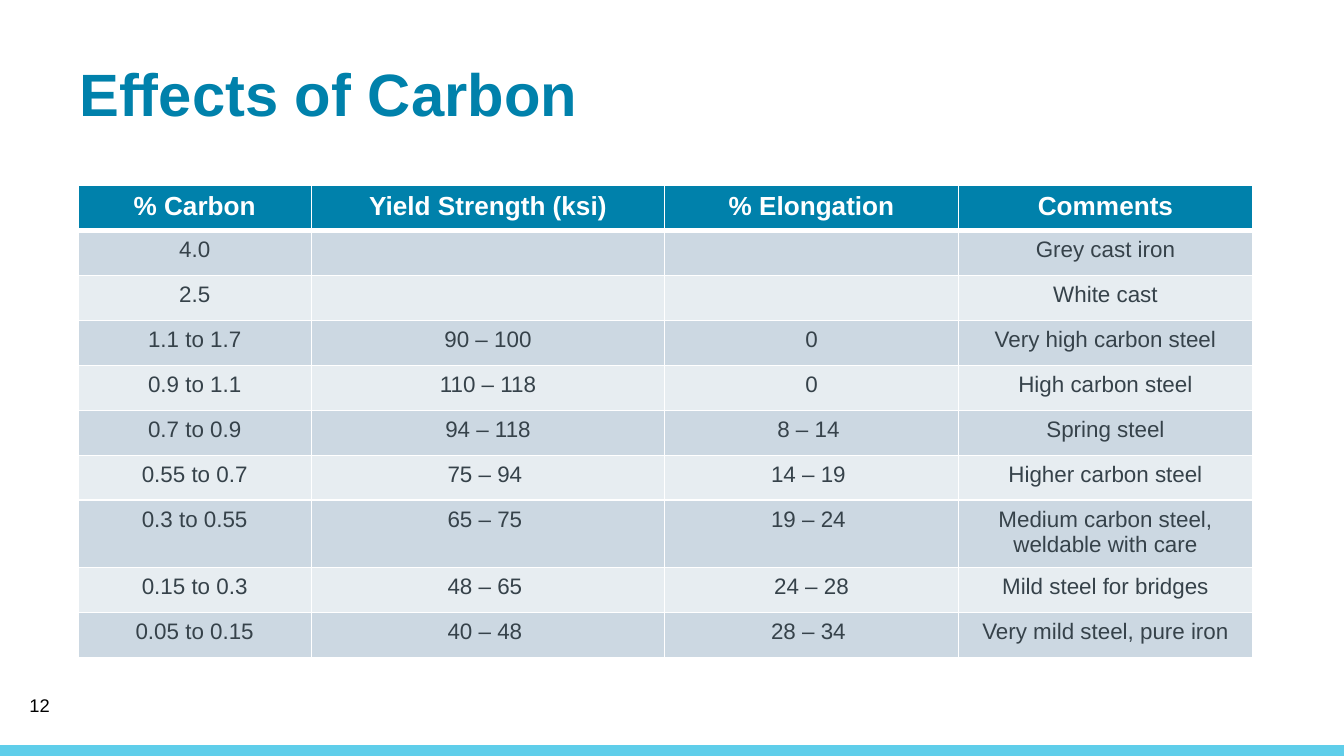
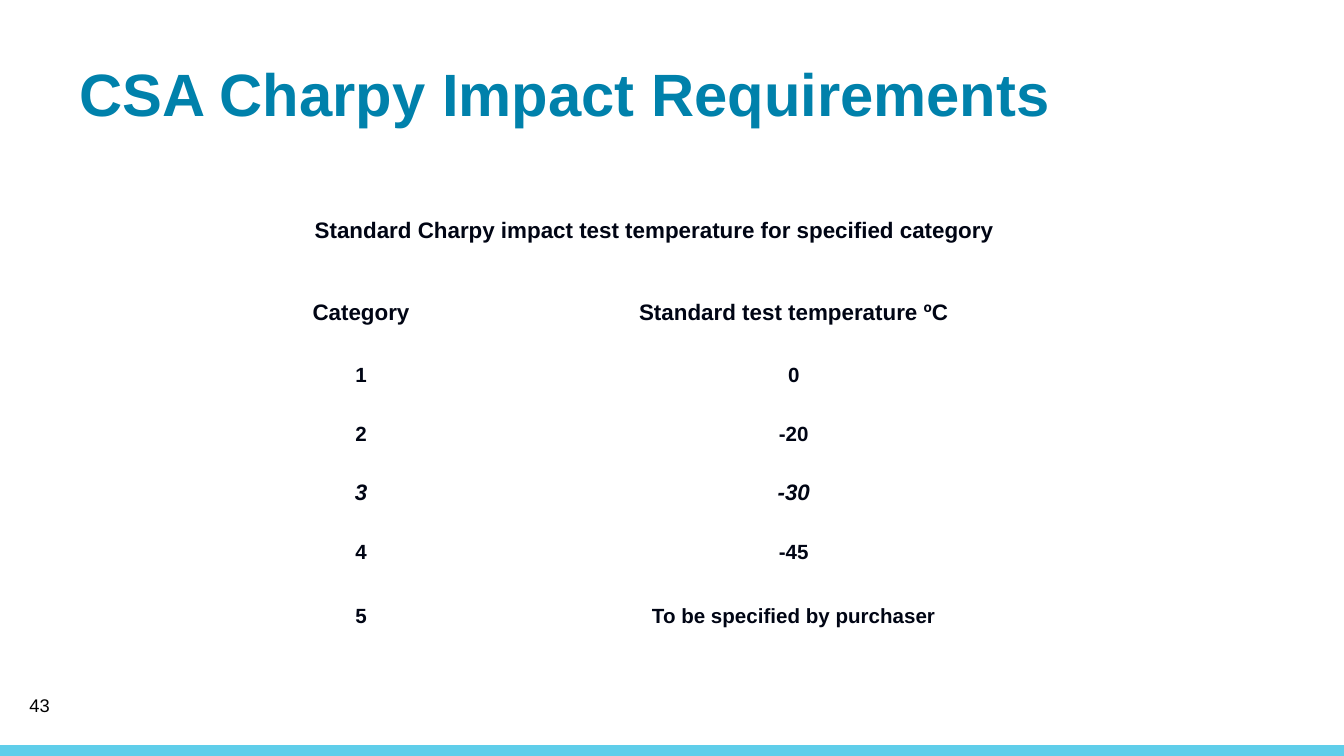
from lxml import etree
from pptx import Presentation
from pptx.dml.color import RGBColor
from pptx.enum.shapes import MSO_SHAPE
from pptx.enum.text import MSO_ANCHOR, PP_ALIGN
from pptx.oxml.ns import qn
from pptx.util import Inches, Pt

RECT = MSO_SHAPE.RECTANGLE
TOP, MIDDLE = MSO_ANCHOR.TOP, MSO_ANCHOR.MIDDLE
LEFT, CENTER = PP_ALIGN.LEFT, PP_ALIGN.CENTER


class Theme:
    font = "Arial"
    accent = "0081AB"
    band = "5FCEEA"
    white = "FFFFFF"
    black = "000000"
    body = "36424A"
    ink = "000514"
    stripes = ("CCD8E2", "E7EDF1")
    title_size, header_size, body_size, small_size, number_size = 32, 14, 12, 11, 9.8
    line, header_line = 1, 3


CARBON = {
    "title": "Effects of Carbon",
    "number": "12",
    "box": (0.58, 1.38, 8.74, 3.51),
    "cols": [1.74, 2.63, 2.19, 2.19],
    "rows": [0.33] * 7 + [0.49] + [0.33] * 2,
    "cells": [
        ("% Carbon", "Yield Strength (ksi)", "% Elongation", "Comments"),
        ("4.0", "", "", "Grey cast iron"),
        ("2.5", "", "", "White cast"),
        ("1.1 to 1.7", "90 – 100", "0", "Very high carbon steel"),
        ("0.9 to 1.1", "110 – 118", "0", "High carbon steel"),
        ("0.7 to 0.9", "94 – 118", "8 – 14 ", "Spring steel"),
        ("0.55 to 0.7", "75 – 94 ", "14 – 19 ", "Higher carbon steel"),
        ("0.3 to 0.55", "65 – 75 ", "19 – 24 ", "Medium carbon steel, weldable with care"),
        ("0.15 to 0.3", "48 – 65 ", "24 – 28", "Mild steel for bridges"),
        ("0.05 to 0.15", "40 – 48 ", "28 – 34 ", "Very mild steel, pure iron"),
    ],
}

CHARPY = {
    "title": "CSA Charpy Impact Requirements",
    "number": "43",
    "box": (1.65, 1.35, 6.44, 3.5),
    "cols": [2.07, 4.36],
    "rows": [0.73, 0.49] + [0.44] * 4 + [0.52],
    "cells": [
        ("Standard Charpy impact test temperature for specified category", ""),
        ("Category", "Standard test temperature ºC"),
        ("1", "0"),
        ("2", "-20"),
        ("3", "-30"),
        ("4", "-45"),
        ("5", "To be specified by purchaser"),
    ],
}
CHARPY_HEADER_ROWS = 2
CHARPY_EMPHASIS_ROW = 4


def rgb(value):
    return RGBColor.from_string(value)


def share(total, parts):
    """Scale the parts so that together they fill the total length."""
    return [Inches(total * part / sum(parts)) for part in parts]


def write(tf, text, size, color, bold=False, italic=False, align=LEFT):
    p = tf.paragraphs[0]
    p.text = text
    p.alignment = align
    for r in p.runs:
        r.font.name = Theme.font
        r.font.size = Pt(size)
        r.font.bold = bold
        r.font.italic = italic
        r.font.color.rgb = rgb(color)
    if not text:  # keeps an empty cell from growing to the default size
        etree.SubElement(p._p, qn("a:endParaRPr"), sz=str(size * 100))


def add_text(s, box, text, size, color, bold=False, anchor=TOP, left=0.1):
    tf = s.shapes.add_textbox(*map(Inches, box)).text_frame
    tf.word_wrap = True
    tf.vertical_anchor = anchor
    tf.margin_left = Inches(left)
    write(tf, text, size, color, bold)


def set_borders(cell, top=Theme.line, bottom=Theme.line):
    tc_pr = cell._tc.get_or_add_tcPr()
    widths = {"lnL": Theme.line, "lnR": Theme.line, "lnT": top, "lnB": bottom}
    for i, (tag, width) in enumerate(widths.items()):
        ln = etree.Element(qn(f"a:{tag}"), w=str(Pt(width)))
        fill = etree.SubElement(ln, qn("a:solidFill"))
        etree.SubElement(fill, qn("a:srgbClr"), val=Theme.white)
        tc_pr.insert(i, ln)


def add_table(s, data, style_cell):
    cols, rows, box = data["cols"], data["rows"], data["box"]
    table = s.shapes.add_table(len(rows), len(cols), *map(Inches, box)).table
    table.first_row = table.horz_banding = False
    for col, width in zip(table.columns, share(box[2], cols)):
        col.width = width
    for row, height in zip(table.rows, share(box[3], rows)):
        row.height = height
    for i, texts in enumerate(data["cells"]):
        for j, text in enumerate(texts):
            style_cell(table.cell(i, j), text, i)
    return table


def style_carbon_cell(cell, text, row):
    cell.fill.solid()
    if row == 0:
        cell.fill.fore_color.rgb = rgb(Theme.accent)
        write(cell.text_frame, text, Theme.header_size, Theme.white, True, align=CENTER)
        set_borders(cell, bottom=Theme.header_line)
    else:
        cell.fill.fore_color.rgb = rgb(Theme.stripes[(row - 1) % 2])
        write(cell.text_frame, text, Theme.body_size, Theme.body, align=CENTER)
        set_borders(cell, top=Theme.header_line if row == 1 else Theme.line)


def style_charpy_cell(cell, text, row):
    emphasis = row == CHARPY_EMPHASIS_ROW
    large = emphasis or row < CHARPY_HEADER_ROWS
    cell.fill.background()
    cell.vertical_anchor = MIDDLE
    cell.margin_left = cell.margin_right = Inches(0.07)
    cell.margin_top = cell.margin_bottom = Inches(0.04)
    write(cell.text_frame, text, Theme.body_size if large else Theme.small_size,
          Theme.ink, True, emphasis, CENTER)
    set_borders(cell)


def add_slide(prs, data):
    """Add a slide with the shared band, title and number."""
    s = prs.slides.add_slide(prs.slide_layouts[6])
    s.background.fill.solid()
    s.background.fill.fore_color.rgb = rgb(Theme.white)
    band_height = Inches(0.08)
    band = s.shapes.add_shape(RECT, 0, prs.slide_height - band_height,
                              prs.slide_width, band_height)
    band.shadow.inherit = False
    band.fill.solid()
    band.fill.fore_color.rgb = rgb(Theme.band)
    band.line.fill.background()
    add_text(s, (0.59, 0.37, 8.99, 0.57), data["title"], Theme.title_size,
             Theme.accent, bold=True, left=0)
    add_text(s, (0.12, 5.1, 2.25, 0.3), data["number"], Theme.number_size,
             Theme.black, anchor=MIDDLE)
    return s


def main():
    prs = Presentation()
    prs.slide_width = Inches(10)
    prs.slide_height = prs.slide_width * 9 // 16
    add_table(add_slide(prs, CARBON), CARBON, style_carbon_cell)
    table = add_table(add_slide(prs, CHARPY), CHARPY, style_charpy_cell)
    table.cell(0, 0).merge(table.cell(0, 1))
    prs.save("out.pptx")


if __name__ == "__main__":
    main()
